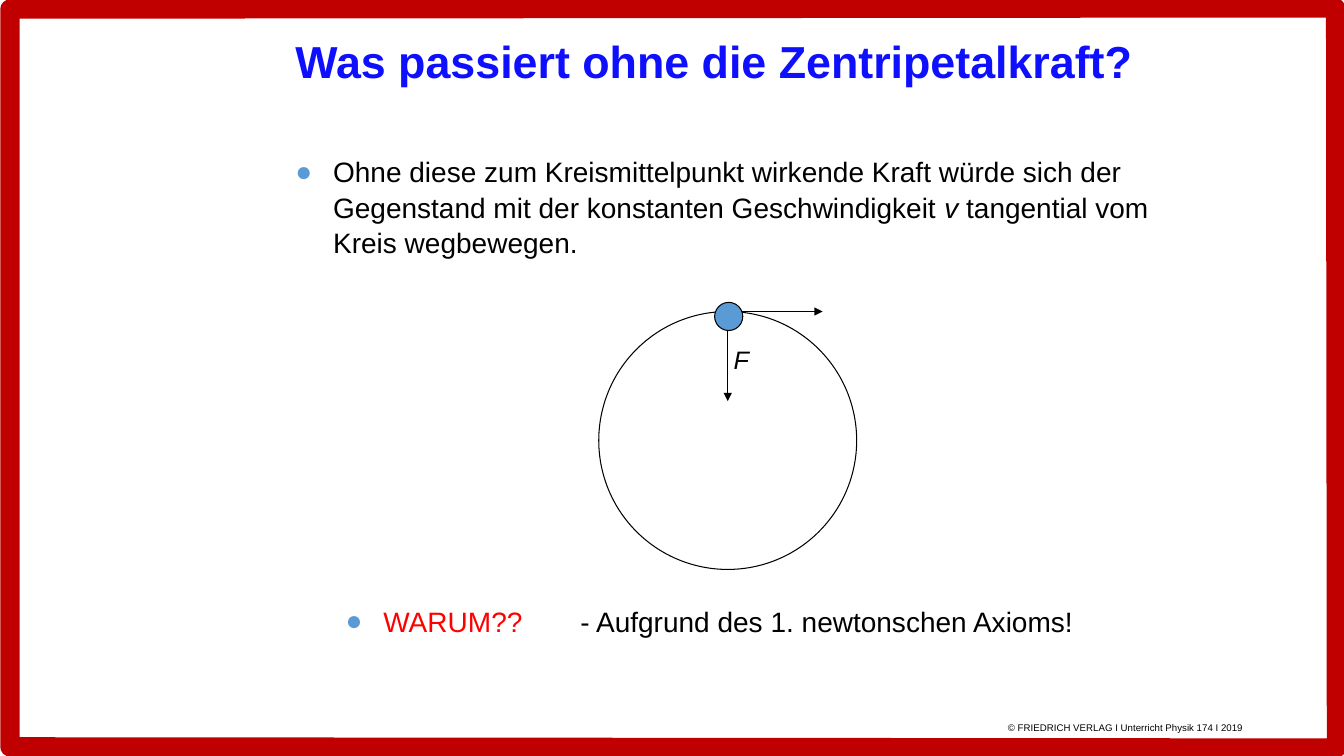
import dataclasses

import pptx
import pptx.dml.color
import pptx.enum.shapes
import pptx.enum.text
import pptx.oxml.ns
import pptx.util
from lxml import etree
from pptx.util import Cm


@dataclasses.dataclass(frozen=True)
class Theme:
    font: str = "Arial"
    frame: str = "C00000"
    heading: str = "0F0FFF"
    ink: str = "000000"
    accent: str = "5B9BD5"
    question: str = "FF0000"
    heading_size: float = 32
    text_size: float = 20
    label_size: float = 18
    credit_size: float = 12
    thin: float = 0.75
    thick: float = 13.75
    leading: float = 1.05


THEME = Theme()


def rgb(code):
    return pptx.dml.color.RGBColor.from_string(code)


def add_xml(parent, tag, **attributes):
    return etree.SubElement(parent, pptx.oxml.ns.qn(tag), attributes)


def place(element, left, top, width, height):
    element.left, element.top = Cm(left), Cm(top)
    element.width, element.height = Cm(width), Cm(height)


def add_bullet(paragraph):
    properties = paragraph._p.get_or_add_pPr()
    properties.set("marL", str(Cm(0.95)))
    properties.set("indent", str(Cm(-0.95)))
    add_xml(add_xml(properties, "a:buClr"), "a:srgbClr", val=THEME.accent)
    add_xml(properties, "a:buFont", typeface=THEME.font)
    add_xml(properties, "a:buChar", char="●")


def write(holder, runs, size, color=THEME.ink, bold=False, bullet=False,
          wrap=True, leading=1.0, anchor=pptx.enum.text.MSO_ANCHOR.TOP):
    frame = holder.text_frame
    frame.word_wrap = wrap
    frame.auto_size = pptx.enum.text.MSO_AUTO_SIZE.NONE
    frame.vertical_anchor = anchor
    paragraph = frame.paragraphs[0]
    if bullet:
        add_bullet(paragraph)
    paragraph.alignment = pptx.enum.text.PP_ALIGN.LEFT
    paragraph.space_before = pptx.util.Pt(0)
    paragraph.line_spacing = leading
    for words, italic in runs:
        run = paragraph.add_run()
        run.text = words
        run.font.name = THEME.font
        run.font.size = pptx.util.Pt(size)
        run.font.bold = bold
        run.font.italic = italic
        run.font.color.rgb = rgb(color)
    return paragraph


def add_text(slide, box, runs, size, **style):
    holder = slide.shapes.add_textbox(*map(Cm, box))
    return write(holder, runs, size, **style)


def outline(element, color, width):
    element.line.color.rgb = rgb(color)
    element.line.width = pptx.util.Pt(width)


def add_circle(slide, left, top, diameter, fill=None):
    circle = slide.shapes.add_shape(
        pptx.enum.shapes.MSO_SHAPE.OVAL,
        Cm(left), Cm(top), Cm(diameter), Cm(diameter))
    circle.shadow.inherit = False
    if fill:
        circle.fill.solid()
        circle.fill.fore_color.rgb = rgb(fill)
    else:
        circle.fill.background()
    outline(circle, THEME.ink, THEME.thin)


def add_arrow(slide, start, end):
    arrow = slide.shapes.add_connector(
        pptx.enum.shapes.MSO_CONNECTOR.STRAIGHT, *map(Cm, start + end))
    outline(arrow, THEME.ink, THEME.thin)
    add_xml(arrow.line._get_or_add_ln(), "a:tailEnd", type="triangle")
    add_xml(arrow._element.spPr, "a:effectLst")


def add_frame(slide):
    corners = [(0.25, 0.23), (33.66, 0.2), (33.68, 18.85), (0.25, 18.82)]
    points = [(Cm(x), Cm(y)) for x, y in corners]
    builder = slide.shapes.build_freeform(*points[0])
    builder.add_line_segments(points[1:], close=True)
    border = builder.convert_to_shape()
    border.shadow.inherit = False
    border.fill.background()
    outline(border, THEME.frame, THEME.thick)


def add_credit(slide):
    credit = add_text(
        slide, (25.15, 18.01, 8.38, 0.7),
        [("© FRIEDRICH VERLAG I Unterricht Physik 174 I 2019", False)],
        THEME.credit_size)
    credit.runs[0].font._element.set("baseline", "30000")


def add_orbit(slide):
    add_arrow(slide, (18.34, 7.95), (18.34, 10.11))
    add_text(slide, (18.24, 8.56, 0.89, 1.02), [("F", True)],
             THEME.label_size, wrap=False)
    add_circle(slide, 15.09, 7.85, 6.5)
    add_circle(slide, 18.01, 7.62, 0.71, THEME.accent)
    add_arrow(slide, (18.69, 7.85), (20.73, 7.85))


def main():
    deck = pptx.Presentation()
    deck.slide_width, deck.slide_height = Cm(33.87), Cm(19.05)
    slide = deck.slides.add_slide(deck.slide_layouts[1])

    add_frame(slide)
    add_credit(slide)

    heading = slide.shapes.title
    place(heading, 7.19, 0.76, 22.86, 1.55)
    write(heading, [("Was passiert ohne die Zentripetalkraft?", False)],
          THEME.heading_size, color=THEME.heading, bold=True,
          anchor=pptx.enum.text.MSO_ANCHOR.MIDDLE)

    explanation = slide.placeholders[1]
    place(explanation, 7.19, 3.73, 22.86, 2.9)
    write(explanation, [
        ("Ohne diese zum Kreismittelpunkt wirkende Kraft würde sich der "
         "Gegenstand mit der konstanten Geschwindigkeit ", False),
        ("v", True),
        (" tangential vom Kreis wegbewegen.", False),
    ], THEME.text_size, bullet=True, leading=THEME.leading)

    add_orbit(slide)
    add_text(slide, (8.46, 15.06, 5.05, 1.17), [("WARUM??", False)],
             THEME.text_size, color=THEME.question, bullet=True,
             leading=THEME.leading)
    add_text(slide, (14.38, 15.06, 15.67, 1.17),
             [("- Aufgrund des 1. newtonschen Axioms!", False)],
             THEME.text_size, leading=THEME.leading)

    deck.save("out.pptx")


if __name__ == "__main__":
    main()
